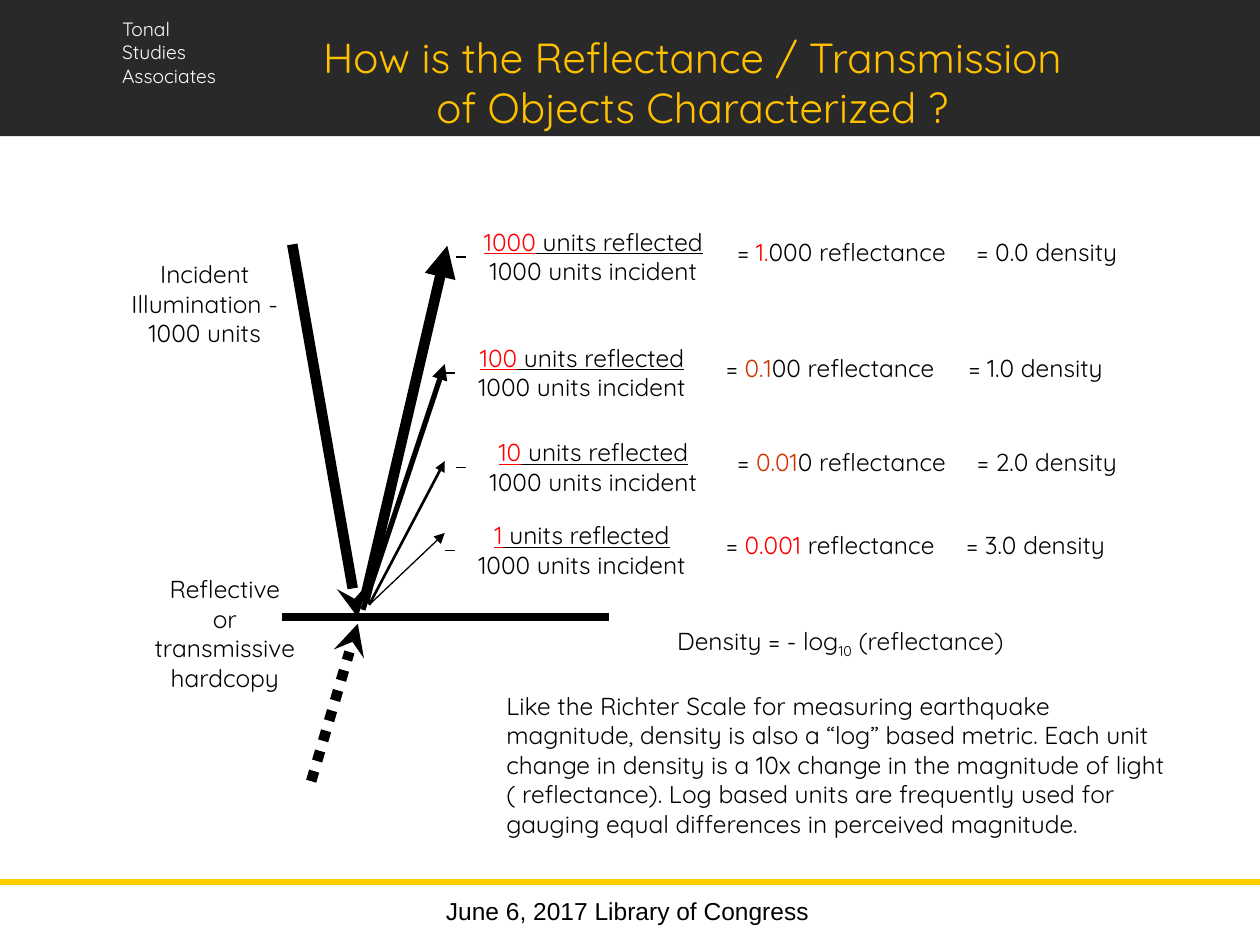
from lxml.etree import SubElement
from pptx import Presentation
from pptx.dml.color import RGBColor
from pptx.enum.dml import MSO_LINE
from pptx.enum.shapes import MSO_CONNECTOR, MSO_SHAPE
from pptx.enum.text import PP_ALIGN
from pptx.oxml.ns import qn
from pptx.util import Inches, Pt

BLACK, WHITE, DARK = "000000", "FFFFFF", "292929"
RED, RUST, GOLD, AMBER = "FF0000", "CC3300", "FFCC00", "FFC000"
FONT = "Quicksand"

ROWS = [
    (3.17, 1.75, "1000", ("1.", RED), "000", "0.0"),
    (3.08, 2.67, "100", ("0.1", RUST), "00", "1.0"),
    (3.17, 3.42, "10", ("0.01", RUST), "0", "2.0"),
    (3.08, 4.08, "1", ("0.001", RED), "", "3.0"),
]
RAYS = [
    ((2.89, 4.78), (3.55, 1.95), 6),
    ((2.93, 4.23), (2.93, 4.23), 0.75),
    ((2.88, 4.84), (3.53, 2.89), 3),
    ((2.93, 4.8), (3.53, 3.66), 1.5),
    ((2.93, 4.8), (3.53, 4.23), 0.75),
]
LAW = (
    "Like the Richter Scale for measuring earthquake magnitude, density is also "
    "a “log” based metric. Each unit change in density is a 10x change in the "
    "magnitude of light ( reflectance). Log based units are frequently used for "
    "gauging equal differences in perceived magnitude."
)


def paint(code):
    """Turn a hex string into a colour."""
    return RGBColor.from_string(code)


def add_run(para, words, color=BLACK, base=None, **style):
    """Add one styled run to a paragraph."""
    run = para.add_run()
    run.text = words
    look = {"size": Pt(14), "name": FONT, **style}
    for name, value in look.items():
        setattr(run.font, name, value)
    run.font.color.rgb = paint(color)
    if base:
        run.font._element.set("baseline", str(base * 1000))


def add_text(slide, at, lines, wrap=True, align=PP_ALIGN.CENTER, **style):
    """Add a text box whose lines are strings or lists of (words, format)."""
    box = slide.shapes.add_textbox(*map(Inches, at))
    frame = box.text_frame
    frame.word_wrap = wrap
    for i, line in enumerate(lines):
        para = frame.add_paragraph() if i else frame.paragraphs[0]
        para.alignment = align
        runs = [(line, {})] if isinstance(line, str) else line
        for words, extra in runs:
            add_run(para, words, **{**style, **extra})
    return frame


def add_line(slide, start, end, width, color=BLACK, head=None, dash=None):
    """Add a straight line, with an arrowhead at its end if one is named."""
    line = slide.shapes.add_connector(
        MSO_CONNECTOR.STRAIGHT, *map(Inches, (*start, *end)))
    line.line.color.rgb = paint(color)
    line.line.width = Pt(width)
    if dash:
        line.line.dash_style = dash
    props = line._element.spPr
    if head:
        SubElement(props.find(qn("a:ln")), qn("a:tailEnd"), type=head)
    SubElement(props, qn("a:effectLst"))


def add_frame(slide):
    """Add the header band, its texts and the footer."""
    band = slide.shapes.add_shape(
        MSO_SHAPE.RECTANGLE, *map(Inches, (0, 0, 10, 1.08)))
    band.shadow.inherit = False
    band.fill.solid()
    band.fill.fore_color.rgb = paint(DARK)
    band.line.fill.background()
    add_text(slide, (0.87, 0.09, 1.21, 0.65), ["Tonal", "Studies", "Associates"],
             align=PP_ALIGN.LEFT, size=Pt(11), color=WHITE)
    add_text(slide, (1.62, 0.2, 7.75, 0.83),
             ["How is the Reflectance / Transmission", "of Objects Characterized ?"],
             size=Pt(24), color=AMBER)
    add_line(slide, (0, 7), (10, 7), 3, GOLD)
    add_text(slide, (3.27, 7.06, 3.42, 0.4),
             ["June 6, 2017 Library of Congress"], name="Arial")


def add_rays(slide):
    """Add the hardcopy line with its incoming and outgoing light."""
    add_line(slide, (2.24, 4.9), (4.83, 4.9), 4.5)
    add_line(slide, (2.32, 1.94), (2.84, 4.9), 6, head="stealth")
    add_line(slide, (2.47, 6.2), (2.84, 4.95), 6, head="stealth",
             dash=MSO_LINE.ROUND_DOT)
    for start, end, width in RAYS:
        add_line(slide, start, end, width, head="triangle")
    add_text(slide, (0.92, 2.01, 1.41, 0.8),
             ["Incident", "Illumination -", "1000 units"], wrap=False)
    add_text(slide, (1.08, 4.51, 1.41, 1.03),
             ["Reflective", "or", "transmissive", "hardcopy"], wrap=False)


def add_row(slide, left, top, units, mark, rest, level):
    """Add one row: tick, fraction, reflectance and density."""
    first = [(units, {"color": RED, "underline": True}),
             (" units reflected", {"underline": True})]
    add_text(slide, (left, top, 3.08, 0.57), [first, "1000 units incident"])
    part, color = mark
    ratio = [("= ", {}), (part, {"color": color}), (rest + " reflectance", {})]
    add_text(slide, (left + 2.5, top + 0.08, 2.02, 0.33), [ratio], wrap=False)
    add_text(slide, (left + 4.42, top + 0.08, 1.44, 0.33),
             [f"= {level} density"], wrap=False)
    add_line(slide, (left + 0.45, top + 0.29), (left + 0.53, top + 0.29), 0.75)


def add_law(slide):
    """Add the density formula and the note on log units."""
    rule = [("Density = - log", {}), ("10", {"base": -25}), (" (reflectance)", {})]
    frame = add_text(slide, (3.92, 4.92, 5.5, 1.99), [rule, LAW])
    note = frame.paragraphs[1]
    note.alignment = PP_ALIGN.LEFT
    note.space_before = Pt(18)


def main():
    """Build the slide and save it."""
    deck = Presentation()
    deck.slide_width, deck.slide_height = Inches(10), Inches(7.5)
    slide = deck.slides.add_slide(deck.slide_layouts[6])
    add_frame(slide)
    add_rays(slide)
    for row in ROWS:
        add_row(slide, *row)
    add_law(slide)
    deck.save("out.pptx")


if __name__ == "__main__":
    main()
